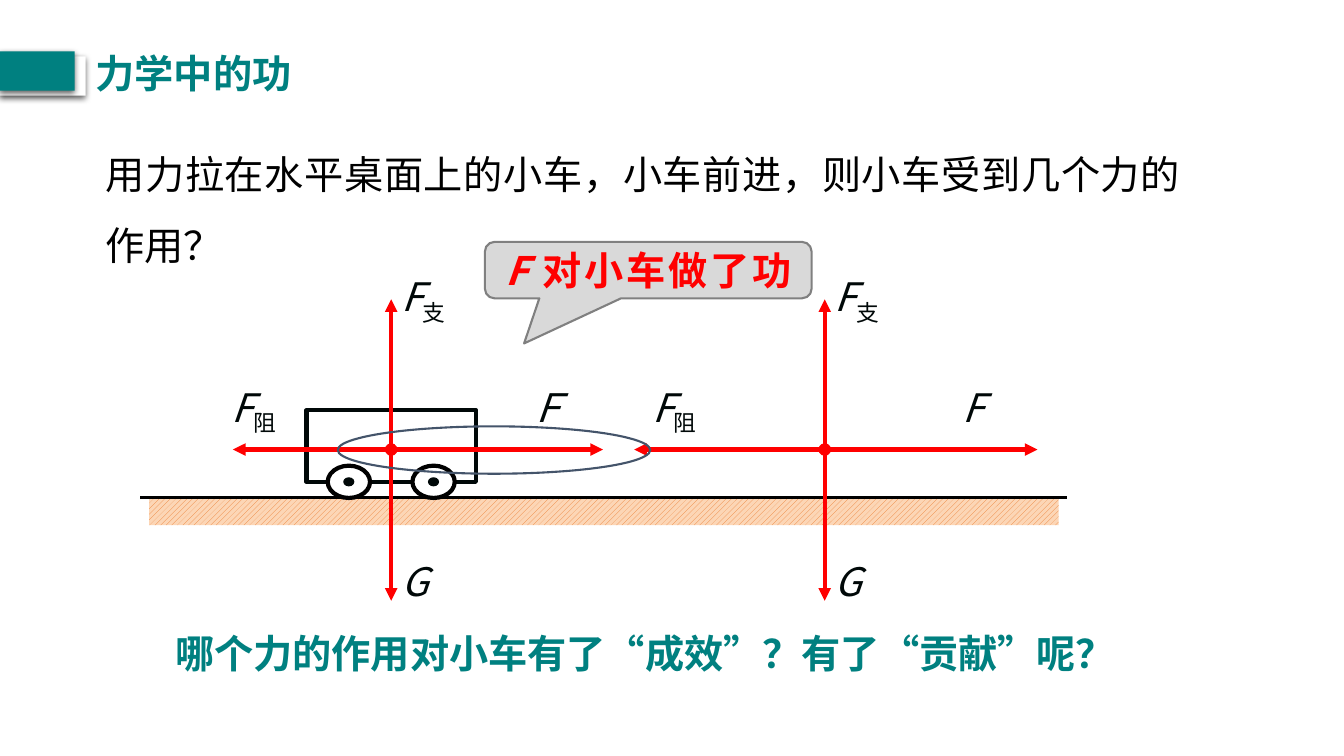
from lxml.etree import SubElement
from pptx import Presentation
from pptx.dml.color import RGBColor
from pptx.enum.dml import MSO_PATTERN
from pptx.enum.shapes import MSO_CONNECTOR, MSO_SHAPE as Shape
from pptx.enum.text import MSO_ANCHOR as Anchor, MSO_AUTO_SIZE, PP_ALIGN as Align
from pptx.oxml.ns import qn
from pptx.util import Inches, Pt

TEAL, RED, INK, BLACK, WHITE = "008080", "FF0000", "000808", "000000", "FFFFFF"
AXIS_Y = 4.46


def color(value):
    return RGBColor.from_string(value)


class Board:
    font = "Noto Sans CJK SC"
    size = 28

    def __init__(self, page):
        self.page = page

    def shape(self, kind, left, top, width, height, fill=None, line=None, weight=1):
        shape = self.page.shapes.add_shape(
            kind, Inches(left), Inches(top), Inches(width), Inches(height))
        shape.shadow.inherit = False
        if fill:
            shape.fill.solid()
            shape.fill.fore_color.rgb = color(fill)
        else:
            shape.fill.background()
        if line:
            shape.line.color.rgb = color(line)
            shape.line.width = Pt(weight)
        else:
            shape.line.fill.background()
        return shape

    def line(self, start, end, stroke, weight, **ends):
        line = self.page.shapes.add_connector(
            MSO_CONNECTOR.STRAIGHT, *[Inches(value) for value in (*start, *end)])
        line.line.color.rgb = color(stroke)
        line.line.width = Pt(weight)
        outline = line._element.spPr.find(qn("a:ln"))
        for name, kind in ends.items():
            SubElement(outline, qn(f"a:{name}End"), type=kind)
        SubElement(line._element.spPr, qn("a:effectLst"))

    def fill_text(self, shape, spans, ink, bold=False, align=Align.LEFT, spacing=None, tracking=None):
        frame = shape.text_frame
        frame.word_wrap = True
        para = frame.paragraphs[0]
        para.alignment = align
        para.line_spacing = spacing
        for text, italic, baseline in spans:
            span = para.add_run()
            span.text = text
            if italic:
                span.font.italic = True
            if baseline:
                span.font._element.set("baseline", str(baseline * 1000))
        font = para.font
        font.size = Pt(self.size)
        font.bold = bold
        font.color.rgb = color(ink)
        font.name = self.font
        SubElement(font._element, qn("a:ea"), typeface=self.font)
        if tracking:
            font._element.set("spc", str(tracking * 100))
        return frame

    def text(self, left, top, width, spans, ink, bold=False):
        box = self.page.shapes.add_textbox(
            Inches(left), Inches(top), Inches(width), Inches(0.57))
        frame = self.fill_text(box, spans, ink, bold)
        frame.auto_size = MSO_AUTO_SIZE.SHAPE_TO_FIT_TEXT

    def ground(self):
        soil = self.shape(Shape.RECTANGLE, 1.48, 4.94, 9.02, 0.27)
        soil.fill.patterned()
        soil.fill.pattern = MSO_PATTERN.WIDE_UPWARD_DIAGONAL
        soil.fill.fore_color.rgb = color("ED7D31")
        soil.fill.back_color.rgb = color("FCD6B6")
        self.line((1.39, 4.94), (10.58, 4.94), BLACK, 2.25)

    def cart(self):
        self.shape(Shape.RECTANGLE, 3.04, 4.07, 1.68, 0.71, line=INK, weight=3)
        for left in (4.09, 3.25):
            self.shape(Shape.OVAL, left, 4.62, 0.42, 0.32, WHITE, BLACK, 3)
            self.shape(Shape.OVAL, left + 0.16, 4.74, 0.1, 0.08, INK, INK, 0.75)

    def forces(self, center, pull, pull_tip, pull_left, drag_tip, drag_left):
        vectors = [
            (pull, "", (pull_tip, AXIS_Y), (pull_left, 3.75), 1.16),
            ("F", "支", (center, 2.97), (center, 2.65), 1.16),
            ("G", "", (center, 5.96), (center, 5.48), 1.16),
            ("F", "阻", (drag_tip, AXIS_Y), (drag_left, 3.75), 1.28),
        ]
        for symbol, subscript, tip, place, width in vectors:
            ends = {"head": "oval"} if symbol == "G" else {}
            self.line((center, AXIS_Y), tip, RED, 3, **ends, tail="triangle")
            spans = [(symbol, True, 0)]
            if subscript:
                spans.append((subscript, False, -25))
            self.text(*place, width, spans, INK)

    def callout(self):
        bubble = self.shape(Shape.ROUNDED_RECTANGULAR_CALLOUT,
                            4.81, 2.4, 3.24, 0.56, "D9D9D9", "808080", 1.5)
        for index, value in enumerate((-0.38, 1.3, 0.17)):
            bubble.adjustments[index] = value
        spans = [("F ", True, 0), ("对小车做了功", False, 0)]
        frame = self.fill_text(bubble, spans, RED, True, Align.CENTER, tracking=2)
        frame.vertical_anchor = Anchor.MIDDLE
        frame.margin_left = frame.margin_right = Inches(0.02)
        frame.margin_top = frame.margin_bottom = Inches(0.01)

    def question(self, text):
        panel = self.shape(Shape.ROUNDED_RECTANGLE, 0.91, 1.39, 10.94, 1.14)
        panel.adjustments[0] = 0.11
        frame = self.fill_text(panel, [(text, False, 0)], BLACK, align=Align.JUSTIFY, spacing=1.5)
        frame.vertical_anchor = Anchor.MIDDLE

    def heading(self, text):
        for top, width, fill in ((0.56, 0.85, WHITE), (0.51, 0.74, TEAL)):
            tab = self.shape(Shape.RECTANGLE, 0, top, width, 0.39, fill)
            effects = tab._element.spPr.find(qn("a:effectLst"))
            shadow = SubElement(effects, qn("a:outerShdw"), blurRad=str(Pt(4.5)),
                                dist=str(Pt(1.5)), dir="5400000", algn="t", rotWithShape="0")
            tint = SubElement(shadow, qn("a:srgbClr"), val=BLACK)
            SubElement(tint, qn("a:alpha"), val="63000")
        self.text(0.85, 0.44, 3.74, [(text, False, 0)], TEAL, True)


def main():
    deck = Presentation()
    deck.slide_width, deck.slide_height = Inches(13.33), Inches(7.5)
    board = Board(deck.slides.add_slide(deck.slide_layouts[6]))
    board.ground()
    board.question("用力拉在水平桌面上的小车，小车前进，则小车受到几个力的作用？")
    board.forces(8.18, "F", 10.29, 9.45, 6.29, 6.37)
    board.cart()
    board.callout()
    board.forces(3.88, "Ｆ", 5.98, 5.14, 2.31, 2.2)
    board.shape(Shape.OVAL, 3.35, 4.23, 3.1, 0.47, line="44546A", weight=1.5)
    board.heading("力学中的功")
    board.text(1.64, 6.19, 9.63,
               [("哪个力的作用对小车有了“成效”？有了“贡献”呢？", False, 0)], TEAL, True)
    deck.save("out.pptx")


if __name__ == "__main__":
    main()
